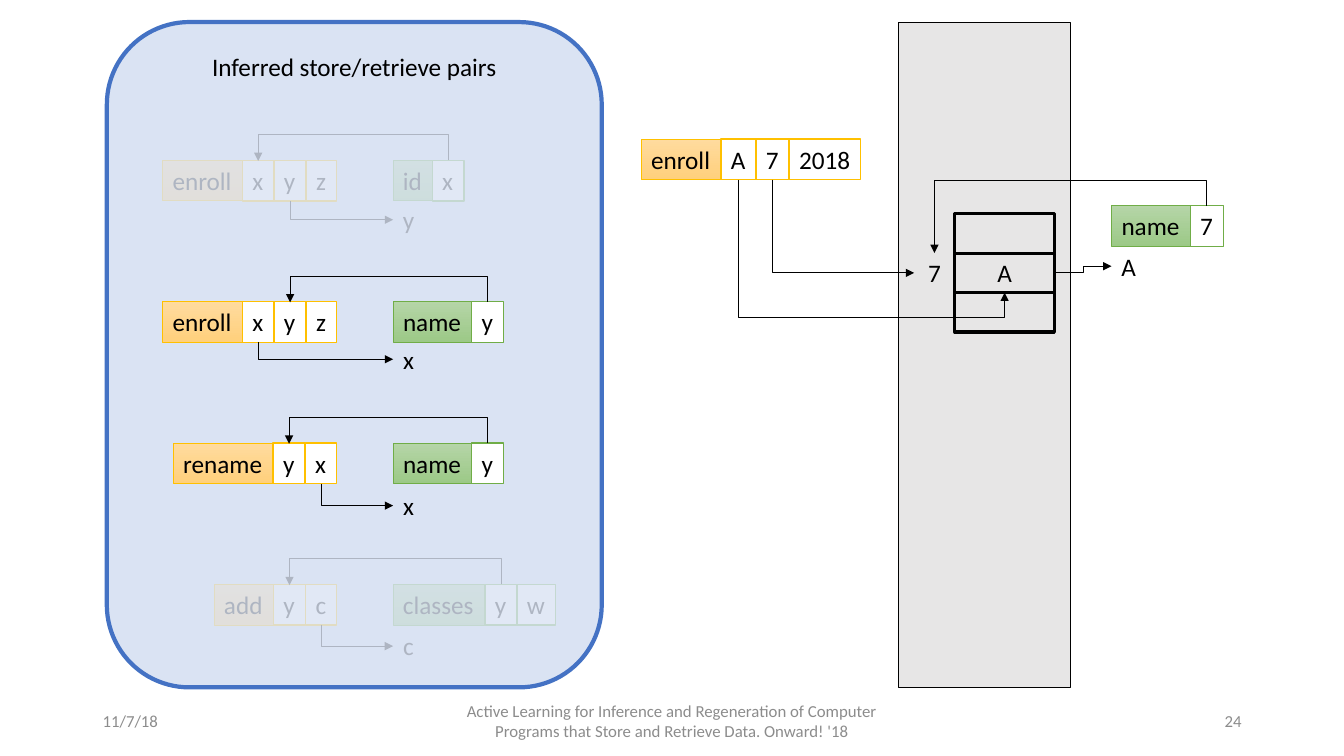
from lxml.etree import SubElement
from pptx import Presentation
from pptx.dml.color import RGBColor
from pptx.enum.shapes import MSO_CONNECTOR, MSO_SHAPE
from pptx.enum.text import MSO_ANCHOR as ANCHOR, MSO_AUTO_SIZE, PP_ALIGN as ALIGN
from pptx.oxml.ns import qn
from pptx.util import Pt

BLACK, WHITE, GREY, PANEL = "000000", "FFFFFF", "8C8C8C", "DAE3F3"
# gradient top, gradient bottom, outline
STORE = ("FFDB9E", "FFD07C", "FFC000")
RETRIEVE = ("B5D5A7", "9CC987", "70AD47")
BOX_HEIGHT = 29
LOOP_HEIGHT = 18
WIDTHS = {
    "enroll": 57, "rename": 71.3, "add": 42.5, "id": 28, "name": 56.2,
    "classes": 65.6, "x": 22.6, "y": 22.9, "z": 21.9, "c": 22.3, "w": 27.5,
    "A": 25, "7": 23.7, "2018": 51,
}
# store command, its arguments, retrieve command, its arguments, result, drop
PAIRS = [
    ("enroll", "xyz", "id", "x", "y", 28),
    ("enroll", "xyz", "name", "y", "x", 26.6),
    ("rename", "yx", "name", "y", "x", 30.2),
    ("add", "yc", "classes", "yw", "c", 29.5),
]
FADED_AREAS = [(93.6, 380.9, 319, 90.7), (87.8, 78.5, 319, 100)]


def color(hex_code):
    return RGBColor.from_string(hex_code)


def write(shape, text, size=18, hex_code=BLACK, align=ALIGN.LEFT,
          anchor=ANCHOR.TOP, wrap=True):
    frame = shape.text_frame
    frame.text = text
    frame.word_wrap = wrap
    frame.vertical_anchor = anchor
    if not wrap:
        frame.auto_size = MSO_AUTO_SIZE.SHAPE_TO_FIT_TEXT
    paragraph = frame.paragraphs[0]
    paragraph.alignment = align
    for run in paragraph.runs:
        run.font.name = "Calibri"
        run.font.size = Pt(size)
        run.font.color.rgb = color(hex_code)


def add_label(slide, bounds, text, **style):
    label = slide.shapes.add_textbox(*map(Pt, bounds))
    write(label, text, **style)


def add_box(slide, bounds, fill=None, line=None, weight=1, kind=MSO_SHAPE.RECTANGLE):
    """Fill is a hex string, a (top, bottom) gradient, or None for no fill."""
    box = slide.shapes.add_shape(kind, *map(Pt, bounds))
    box.shadow.inherit = False
    if fill is None:
        box.fill.background()
    elif isinstance(fill, str):
        box.fill.solid()
        box.fill.fore_color.rgb = color(fill)
    else:
        box.fill.gradient()
        box.fill.gradient_angle = 270
        for stop, hex_code in zip(box.fill.gradient_stops, fill):
            stop.color.rgb = color(hex_code)
    if line is None:
        box.line.fill.background()
    else:
        box.line.color.rgb = color(line)
        box.line.width = Pt(weight)
    return box


def add_veil(slide, bounds):
    veil = add_box(slide, bounds, PANEL)
    fill_color = veil.fill._xPr.find(qn("a:solidFill"))[0]
    SubElement(fill_color, qn("a:alpha"), val="80000")


def add_call(slide, left, top, command, arguments, palette):
    """Draw a command with its argument cells; return the centre x of each argument."""
    *gradient, outline = palette
    centers = {}
    for word in (command, *arguments):
        width = WIDTHS[word]
        bounds = (left, top, width, BOX_HEIGHT)
        if word == command:
            box = add_box(slide, bounds, gradient, outline, 0.5)
        else:
            box = add_box(slide, bounds, WHITE, outline)
            centers[word] = left + width / 2
        write(box, word, wrap=False)
        left += width
    return centers


def add_arrow(slide, start, end, turn=None, vertical=True):
    """Bent arrow: one corner without turn, else two corners.

    Turn is the y (vertical start) or x (horizontal start) of the middle part.
    """
    (x1, y1), (x2, y2) = start, end
    across, down = x2 - x1, y2 - y1
    connector = slide.shapes.add_connector(
        MSO_CONNECTOR.ELBOW, *map(Pt, (x1, y1, x2, y2)))
    connector.line.color.rgb = color(BLACK)
    connector.line.width = Pt(0.5)
    properties = connector._element.spPr
    frame = properties.find(qn("a:xfrm"))
    if vertical:
        width, height = abs(down), abs(across)
        flip_h, flip_v = down > 0, across < 0
        frame.set("rot", str(270 * 60000))
    else:
        width, height = abs(across), abs(down)
        flip_h, flip_v = across < 0, down < 0
    frame.set("flipH", str(int(flip_h)))
    frame.set("flipV", str(int(flip_v)))
    connector.left = Pt((x1 + x2 - width) / 2)
    connector.top = Pt((y1 + y2 - height) / 2)
    connector.width, connector.height = Pt(width), Pt(height)

    geometry = properties.find(qn("a:prstGeom"))
    if turn is None:
        geometry.set("prst", "bentConnector2")
    else:
        share = (turn - y1) / down if vertical else (turn - x1) / across
        SubElement(geometry.find(qn("a:avLst")), qn("a:gd"),
                   name="adj1", fmla=f"val {round(share * 100000)}")
    SubElement(properties.find(qn("a:ln")), qn("a:tailEnd"), type="triangle")
    SubElement(properties, qn("a:effectLst"))


def add_pair(slide, top, store, stored, retrieve, keys, result, drop):
    store_right, retrieve_left = 240.6, 280.8
    store_left = store_right - sum(WIDTHS[word] for word in (store, *stored))
    store_centers = add_call(slide, store_left, top, store, stored, STORE)
    key_centers = add_call(slide, retrieve_left, top, retrieve, keys, RETRIEVE)
    key = keys[0]
    add_arrow(slide, (key_centers[key], top), (store_centers[key], top + 0.5),
              top - LOOP_HEIGHT)
    result_top = top + drop
    add_arrow(slide, (store_centers[result], top + BOX_HEIGHT),
              (retrieve_left, result_top + BOX_HEIGHT / 2))
    add_label(slide, (retrieve_left, result_top, WIDTHS[result], BOX_HEIGHT),
              result, wrap=False)


def add_inferred_pairs(slide):
    panel = add_box(slide, (76.3, 15.8, 353.5, 475.2), PANEL, "4472C4", 3,
                    MSO_SHAPE.ROUNDED_RECTANGLE)
    write(panel, "Inferred store/retrieve pairs", align=ALIGN.CENTER)
    for row, pair in enumerate(PAIRS):
        add_pair(slide, 114.5 + 101 * row, *pair)
    for area in FADED_AREAS:
        add_veil(slide, area)


def add_memory_example(slide):
    store_top, retrieve_top, retrieve_left = 99.4, 146.9, 794
    stored = add_call(slide, 458, store_top, "enroll", ("A", "7", "2018"), STORE)
    keys = add_call(slide, retrieve_left, retrieve_top, "name", ("7",), RETRIEVE)

    cell_left, cell_width, cell_height = 682, 71.2, 28.2
    cell_tops = [152.6 + cell_height * row for row in range(3)]
    value_top = cell_tops[1]
    value_middle, value_bottom = value_top + cell_height / 2, cell_tops[2]
    key_left, key_width = 653, 29
    centered = {"align": ALIGN.CENTER, "anchor": ANCHOR.MIDDLE}

    store_bottom = store_top + BOX_HEIGHT
    add_arrow(slide, (stored["7"], store_bottom), (key_left, value_middle))
    add_arrow(slide, (stored["A"], store_bottom),
              (cell_left + cell_width / 2, value_bottom), 226.8)
    add_arrow(slide, (keys["7"], retrieve_top),
              (key_left + key_width / 2, value_top), retrieve_top - LOOP_HEIGHT)
    cell_right = cell_left + cell_width
    add_arrow(slide, (cell_right, value_middle), (retrieve_left, 190.2),
              (cell_right + retrieve_left) / 2, vertical=False)

    add_label(slide, (retrieve_left, 175.7, WIDTHS["A"], BOX_HEIGHT), "A", wrap=False)
    add_label(slide, (key_left, value_top, key_width, cell_height), "7", **centered)
    for top, value in zip(cell_tops, ("", "A", "")):
        cell = add_box(slide, (cell_left, top, cell_width, cell_height), None, BLACK, 2.25)
        if value:
            write(cell, value, **centered)


def add_footer(slide):
    footer = [
        (66.2, 216, ALIGN.LEFT, "11/7/18"),
        (318, 324, ALIGN.CENTER, "Active Learning for Inference and Regeneration of "
         "Computer Programs that Store and Retrieve Data. Onward! '18"),
        (678, 216, ALIGN.RIGHT, "24"),
    ]
    for left, width, align, text in footer:
        add_label(slide, (left, 500.5, width, 28.8), text, size=12, hex_code=GREY,
                  align=align, anchor=ANCHOR.MIDDLE)


def main():
    presentation = Presentation()
    presentation.slide_width, presentation.slide_height = Pt(960), Pt(540)
    slide = presentation.slides.add_slide(presentation.slide_layouts[6])
    add_box(slide, (641.5, 15.8, 123.1, 475.2), "E7E6E6", BLACK, 0.5)
    add_footer(slide)
    add_inferred_pairs(slide)
    add_memory_example(slide)
    presentation.save("out.pptx")


if __name__ == "__main__":
    main()
